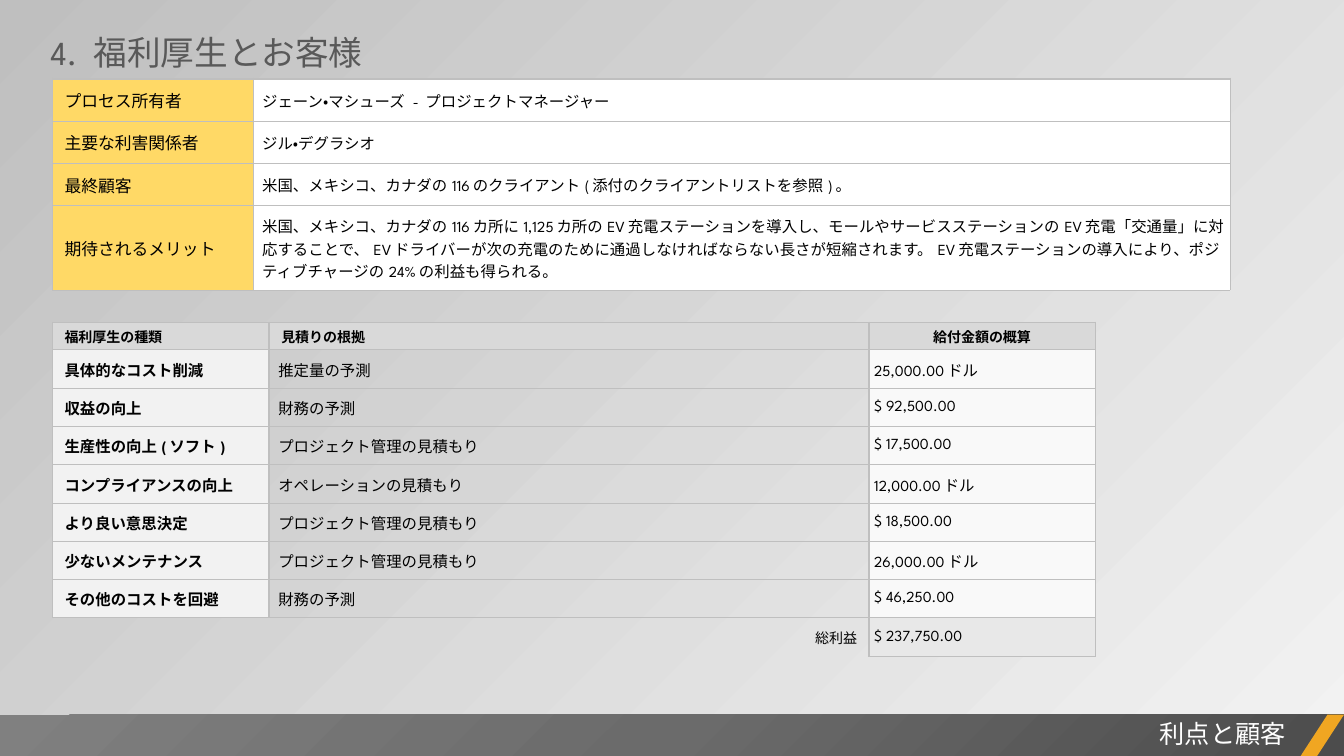
"""Build the benefits and customers slide of a project report."""
from lxml.etree import SubElement
from pptx import Presentation
from pptx.dml.color import RGBColor
from pptx.enum.lang import MSO_LANGUAGE_ID as Language
from pptx.enum.shapes import MSO_SHAPE as Shape
from pptx.enum.text import MSO_ANCHOR as Anchor, MSO_AUTO_SIZE as AutoSize, PP_ALIGN as Align
from pptx.oxml import parse_xml
from pptx.oxml.ns import nsdecls, qn
from pptx.util import Inches, Pt

TITLE = "4. 福利厚生とお客様"
FOOTER = "利点と顧客"
OVERVIEW = [
    ("プロセス所有者", "ジェーン・マシューズ - プロジェクトマネージャー"),
    ("主要な利害関係者", "ジル・デグラシオ"),
    ("最終顧客", "米国、メキシコ、カナダの116のクライアント(添付のクライアントリストを参照)。"),
    ("期待されるメリット",
     "米国、メキシコ、カナダの116カ所に1,125カ所のEV充電ステーションを導入し、"
     "モールやサービスステーションのEV充電「交通量」に対応することで、"
     "EVドライバーが次の充電のために通過しなければならない長さが短縮されます。"
     "EV充電ステーションの導入により、ポジティブチャージの24%の利益も得られる。"),
]
BENEFIT_HEADER = ("福利厚生の種類", "見積りの根拠", "給付金額の概算")
BENEFITS = [
    ("具体的なコスト削減", "推定量の予測", "25,000.00ドル"),
    ("収益の向上", "財務の予測", "$ 92,500.00"),
    ("生産性の向上(ソフト)", "プロジェクト管理の見積もり", "$ 17,500.00"),
    ("コンプライアンスの向上", "オペレーションの見積もり", "12,000.00ドル"),
    ("より良い意思決定", "プロジェクト管理の見積もり", "$ 18,500.00"),
    ("少ないメンテナンス", "プロジェクト管理の見積もり", "26,000.00ドル"),
    ("その他のコストを回避", "財務の予測", "$ 46,250.00"),
]
TOTAL = ("総利益", "$ 237,750.00")

FONT = "League Spartan"
BORDER = "BFBFBF"
OVERVIEW_COLUMNS = (1.99, 9.69)
OVERVIEW_ROWS = (0.42, 0.42, 0.42, 0.84)
BENEFIT_COLUMNS = (2.15, 2.15, 1.49, 2.31, 2.24)
BENEFIT_ROWS = (0.27,) + (0.38,) * (len(BENEFITS) + 1)
TABLE_LEFT = 0.52
BAR_TOP, BAR_HEIGHT = 7.09, 0.41


def color(value):
    return RGBColor.from_string(value)


def write(frame, text, size, ink="000000", bold=False, align=Align.LEFT):
    paragraph = frame.paragraphs[0]
    paragraph.alignment = align
    run = paragraph.add_run()
    run.text = text
    font = run.font
    font.name, font.size, font.bold = FONT, Pt(size), bold
    font.color.rgb = color(ink)
    font.language_id = Language.JAPANESE


def set_borders(cell, widths):
    properties = cell._tc.get_or_add_tcPr()
    for side, width in zip("LRTB", widths):
        line = SubElement(properties, qn(f"a:ln{side}"), w=str(Pt(width)))
        if width:
            fill = SubElement(line, qn("a:solidFill"))
            SubElement(fill, qn("a:srgbClr"), val=BORDER)
        else:
            SubElement(line, qn("a:noFill"))


def style_cell(cell, widths, fill=None, left=0.01, right=0.01):
    cell.vertical_anchor = Anchor.MIDDLE
    cell.margin_left, cell.margin_right = Inches(left), Inches(right)
    cell.margin_top, cell.margin_bottom = Inches(0.01), 0
    set_borders(cell, widths)
    if fill:
        cell.fill.solid()
        cell.fill.fore_color.rgb = color(fill)
    else:
        cell.fill.background()


def add_grid(slide, top, columns, rows):
    frame = slide.shapes.add_table(len(rows), len(columns), Inches(TABLE_LEFT), Inches(top),
                                   Inches(sum(columns)), Inches(sum(rows)))
    table = frame.table
    table.first_row = table.horz_banding = False
    for column, width in zip(table.columns, columns):
        column.width = Inches(width)
    for row, height in zip(table.rows, rows):
        row.height = Inches(height)
    return table


def add_overview(slide):
    table = add_grid(slide, 0.78, OVERVIEW_COLUMNS, OVERVIEW_ROWS)
    looks = (("FFD966", 0.12, 12), ("FFFFFF", 0.09, 11))
    for row, texts in enumerate(OVERVIEW):
        widths = (0.5, 0.5, 0.5 if row else 1.5, 0.5)
        for column, (text, (fill, left, size)) in enumerate(zip(texts, looks)):
            cell = table.cell(row, column)
            style_cell(cell, widths, fill, left)
            write(cell.text_frame, text, size)


def add_benefits(slide):
    table = add_grid(slide, 3.2, BENEFIT_COLUMNS, BENEFIT_ROWS)
    sides = ((0.5, 2), (2, 2), (2, 2), (2, 2), (2, 0.5))
    header_look = (("D9D9D9", 0.12), ("D9D9D9", 0.12), ("D9D9D9", 0.01))
    body_look = (("F2F2F2", 0.12), (None, 0.09), ("F9F9F9", 0.05))
    for row, texts in enumerate([BENEFIT_HEADER] + BENEFITS):
        header = row == 0
        looks = header_look if header else body_look
        top, bottom = 1.5 if header else 0.5, 1 if row == len(BENEFITS) else 0.5
        for column, side in enumerate(sides):
            group = (0, 1, 1, 1, 2)[column]
            style_cell(table.cell(row, column), (*side, top, bottom), *looks[group])
        table.cell(row, 1).merge(table.cell(row, 3))
        for column, text in zip((0, 1, 4), texts):
            align = Align.CENTER if header and column == 4 else Align.LEFT
            write(table.cell(row, column).text_frame, text, 10 if header else 11,
                  bold=header or column == 0, align=align)

    last = len(BENEFITS) + 1
    for column in range(3):
        style_cell(table.cell(last, column), (0, 0, 1, 0))
    label, amount = table.cell(last, 3), table.cell(last, 4)
    style_cell(label, (0, 2, 1, 0), right=0.12)
    style_cell(amount, (2, 0.5, 1, 1), "E8E8E8", 0.05)
    write(label.text_frame, TOTAL[0], 10, align=Align.RIGHT)
    write(amount.text_frame, TOTAL[1], 11)


def add_footer_shape(slide, kind, left, width, fill):
    shape = slide.shapes.add_shape(kind, Inches(left), Inches(BAR_TOP),
                                   Inches(width), Inches(BAR_HEIGHT))
    shape.shadow.inherit = False
    shape.line.fill.background()
    shape.fill.solid()
    shape.fill.fore_color.rgb = color(fill)
    return shape


def add_footer(slide):
    bar = add_footer_shape(slide, Shape.RECTANGLE, 0, 13.33, "6B6B6B")
    stops = "".join(f'<a:gs pos="{position}"><a:srgbClr val="{value}"/></a:gs>' for position, value
                    in ((0, "4C4C4C"), (50000, "6B6B6B"), (100000, "808080")))
    gradient = parse_xml(
        f'<a:gradFill {nsdecls("a")} rotWithShape="1"><a:gsLst>{stops}</a:gsLst>'
        '<a:path path="circle"><a:fillToRect l="100000" t="100000"/></a:path></a:gradFill>')
    properties = bar._element.spPr
    properties.replace(properties.find(qn("a:solidFill")), gradient)
    accent = add_footer_shape(slide, Shape.PARALLELOGRAM, 12.9, 0.43, "F0A622")
    accent.adjustments[0] = 0.65
    box = slide.shapes.add_textbox(Inches(5.25), Inches(7.08), Inches(7.6), Inches(0.4))
    box.text_frame.word_wrap = True
    write(box.text_frame, FOOTER, 18, "FFFFFF", align=Align.RIGHT)


def set_background(slide):
    fill = slide.background.fill
    fill.gradient()
    fill.gradient_angle = 135
    for stop, value in zip(fill.gradient_stops, ("F2F2F2", "BFBFBF")):
        stop.color.rgb = color(value)
    light = slide._element.find(".//" + qn("a:srgbClr"))
    SubElement(light, qn("a:alpha"), val="40000")


def add_title(slide):
    title = slide.shapes.title
    title.left, title.top, title.width, title.height = map(Inches, (0.4, 0.27, 4.33, 0.5))
    frame = title.text_frame
    frame.word_wrap = False
    frame.auto_size = AutoSize.NONE
    frame.vertical_anchor = Anchor.TOP
    write(frame, TITLE, 24, "595959")


def main():
    presentation = Presentation()
    presentation.slide_width, presentation.slide_height = Inches(13.33), Inches(7.5)
    slide = presentation.slides.add_slide(presentation.slide_layouts[5])
    set_background(slide)
    add_footer(slide)
    add_title(slide)
    add_overview(slide)
    add_benefits(slide)
    presentation.save("out.pptx")


if __name__ == "__main__":
    main()
